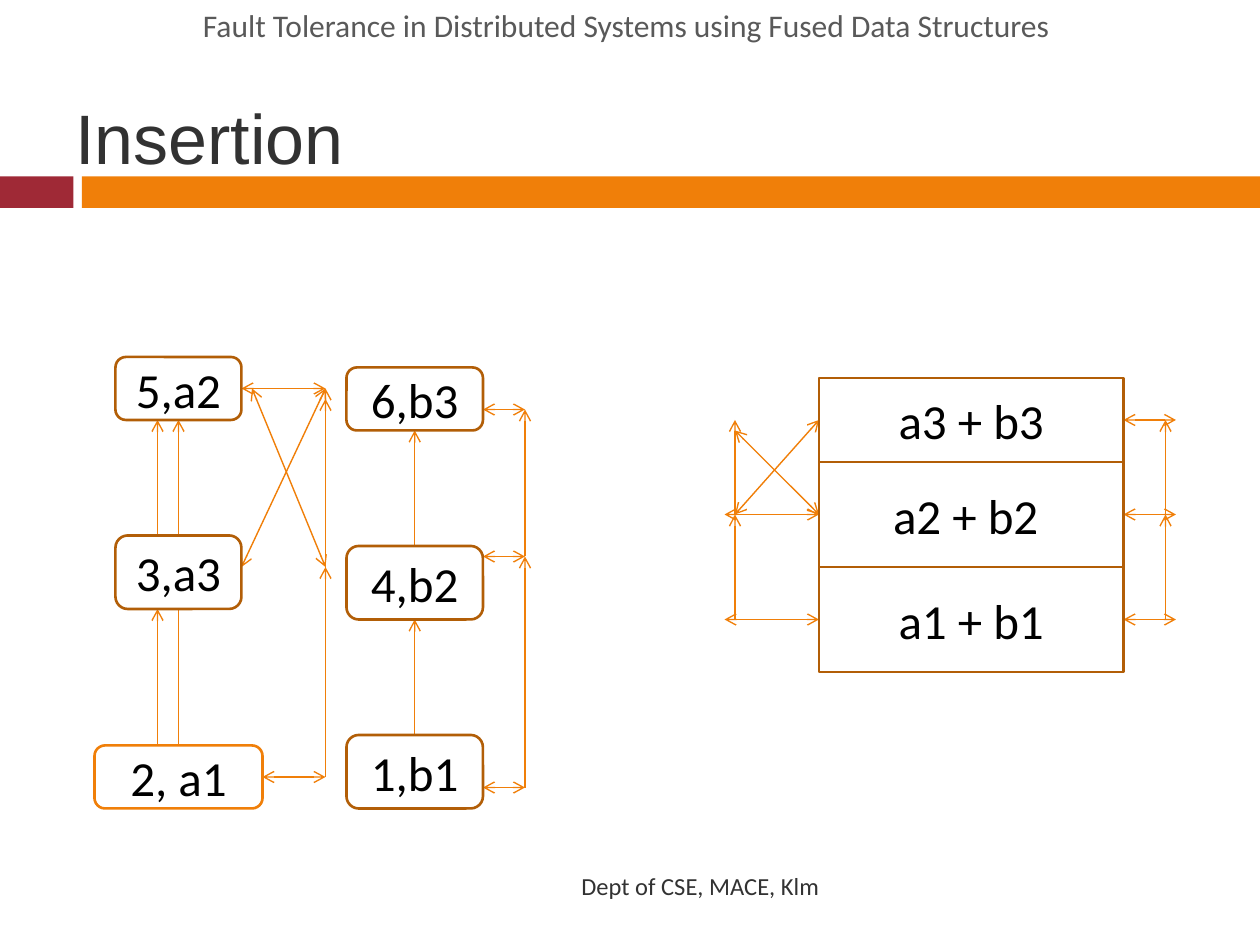
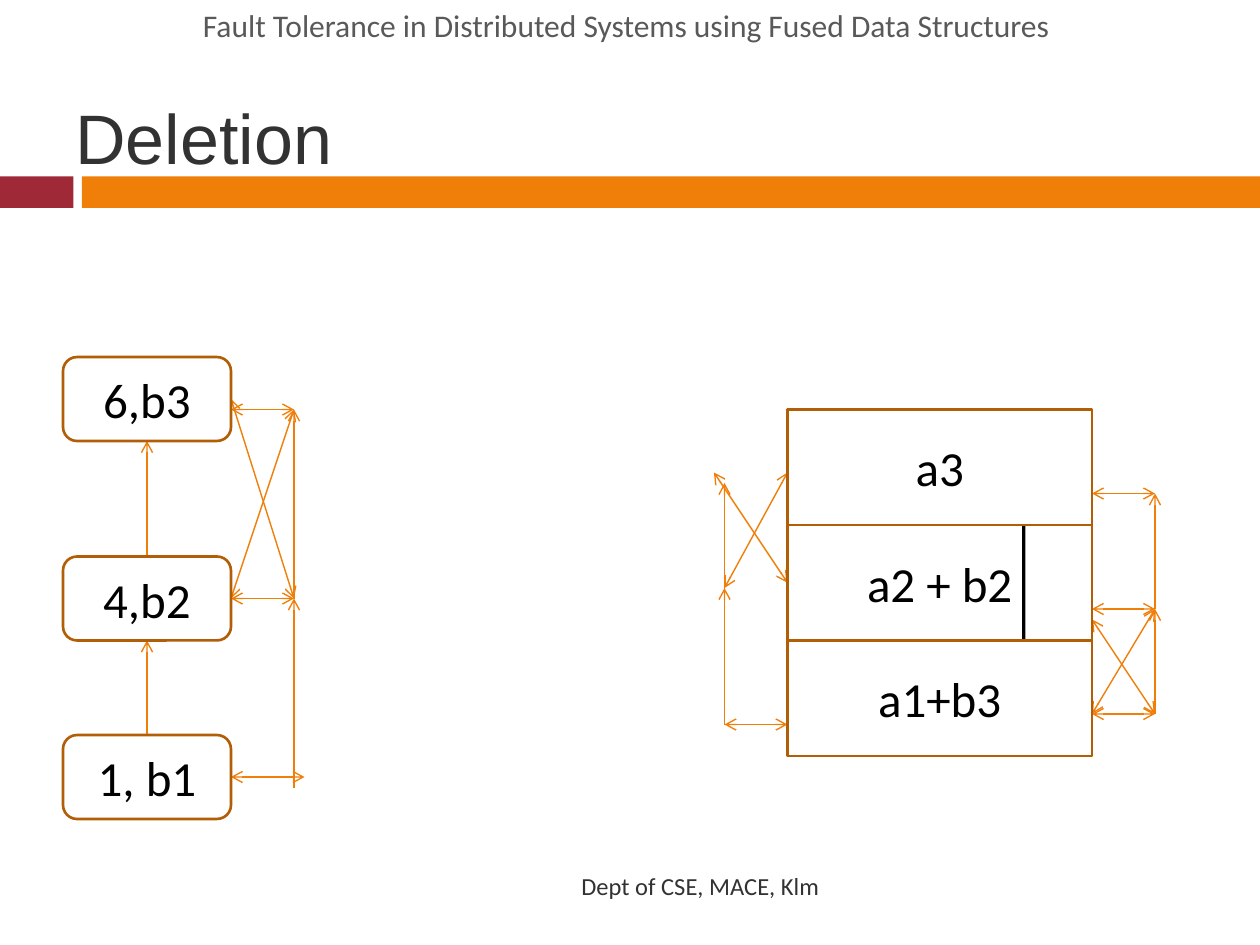
import dataclasses

import lxml.etree
import pptx
import pptx.dml.color
import pptx.enum.shapes
import pptx.enum.text
import pptx.oxml.ns
import pptx.util


@dataclasses.dataclass(frozen=True)
class Theme:
    red: str = "9F2936"
    orange: str = "F07F09"
    brown: str = "B25E07"
    white: str = "FFFFFF"
    black: str = "000000"
    title_ink: str = "323232"
    header_ink: str = "595959"
    title_size: int = 40
    node_size: int = 28
    header_size: int = 18
    footer_size: int = 14
    title_font: str = "Arial"
    body_font: str = "Calibri"
    outline: float = 1.5
    link_width: float = 0.79


THEME = Theme()
COLUMNS, ROWS = 120, 90
RECTANGLE = pptx.enum.shapes.MSO_SHAPE.RECTANGLE
ROUNDED = pptx.enum.shapes.MSO_SHAPE.ROUNDED_RECTANGLE
BENT_ARROW = pptx.enum.shapes.MSO_SHAPE.BENT_UP_ARROW
LEFT, CENTER, RIGHT = (pptx.enum.text.PP_ALIGN.LEFT, pptx.enum.text.PP_ALIGN.CENTER,
                       pptx.enum.text.PP_ALIGN.RIGHT)
MIDDLE, TOP = pptx.enum.text.MSO_ANCHOR.MIDDLE, pptx.enum.text.MSO_ANCHOR.TOP
rgb = pptx.dml.color.RGBColor.from_string

presentation = pptx.Presentation()
presentation.slide_width = pptx.util.Inches(10)
presentation.slide_height = pptx.util.Inches(7.5)


def grid(*cells):
    """Turn counts of square grid cells into slide lengths."""
    return [round(cell * presentation.slide_width / COLUMNS) for cell in cells]


def write_text(shape, text, size=THEME.node_size, color=THEME.black,
               font=THEME.body_font, align=CENTER, anchor=MIDDLE):
    frame = shape.text_frame
    frame.word_wrap = True
    frame.vertical_anchor = anchor
    paragraph = frame.paragraphs[0]
    paragraph.alignment = align
    run = paragraph.add_run()
    run.text = text
    run.font.name = font
    run.font.size = pptx.util.Pt(size)
    run.font.color.rgb = rgb(color)


# Shapes: kind, (column, row, width, height), fill, line, text
BANDS = [
    (RECTANGLE, (0, 16.8, 7, 3), THEME.red, None, ""),
    (RECTANGLE, (7.8, 16.8, COLUMNS - 7.8, 3), THEME.orange, None, ""),
]

insertion_nodes = [
    (ROUNDED, (9, 71, 16, 6), THEME.white, THEME.orange, "2, a1"),
    *((ROUNDED, box, THEME.white, THEME.brown, text) for text, box in [
        ("5,a2", (11, 34, 12, 6)), ("3,a3", (11, 51, 12, 7)),
        ("1,b1", (33, 70, 13, 7)), ("4,b2", (33, 52, 13, 7)),
        ("6,b3", (33, 35, 13, 6))]),
    *((RECTANGLE, (78, row, 29, height), THEME.white, THEME.brown, text)
      for text, row, height in [
          ("a2 + b2 ", 44, 10), ("a1 + b1", 54, 10), ("a3 + b3", 36, 8)]),
]

deletion_nodes = [
    *((ROUNDED, (6, row, 16, 8), THEME.white, THEME.brown, text)
      for text, row in [("1, b1", 70), ("4,b2", 53), ("6,b3", 34)]),
    (RECTANGLE, (75, 50, 29, 11), THEME.white, THEME.brown, "a2 + b2"),
    (BENT_ARROW, (96, 44, 6, 23), THEME.black, None, ""),
    *((RECTANGLE, (75, row, 29, 11), THEME.white, THEME.brown, text)
      for text, row in [("a1+b3", 61), ("a3", 39)]),
]

# Links: (from column, from row, to column, to row)
insertion_one_way = [
    (17, 71, 17, 40), (15, 71, 15, 58), (15, 51, 15, 40),
    (31, 74, 31, 38), (31, 74, 31, 54), (31, 54, 31, 37),
    (39.5, 70, 39.5, 59), (39.5, 52, 39.5, 41),
    (50, 75, 50, 53), (50, 53, 50, 39),
    (111, 59, 111, 49), (111, 50, 111, 40),
    (70, 59, 70, 49), (70, 49, 70, 40),
]
insertion_two_way = [
    (25, 74, 31, 74), (23, 37, 31, 37), (31, 54, 24, 37), (31, 37, 23, 54),
    *((46, row, 50, row) for row in (75, 53, 39)),
    *((107, row, 112, row) for row in (59, 49, 40)),
    *((78, row, 69, row) for row in (59, 49)),
    (70, 49, 78, 40), (70, 41, 78, 49),
]

deletion_one_way = [
    (14, 70, 14, 61), (14, 53, 14, 42), (28, 75, 28, 57), (28, 57, 28, 39),
    (110, 68, 110, 58), (110, 58, 110, 47),
    (69, 69, 69, 56), (69, 57, 69, 46),
]
deletion_two_way = [
    (22, 74, 29, 74), (22, 57, 28, 57), (28, 39, 22, 39),
    (22, 38, 28, 57), (22, 57, 28, 39),
    *((104, row, 110, row) for row in (68, 58, 47)),
    (104, 59, 110, 68), (104, 68, 110, 58),
    (75, 69, 69, 69), (69, 56, 75, 45), (75, 55.5, 68, 45),
]

SLIDES = [
    ("Insertion", insertion_nodes, insertion_one_way, insertion_two_way),
    ("Deletion", deletion_nodes, deletion_one_way, deletion_two_way),
]

for title, nodes, one_way, two_way in SLIDES:
    slide = presentation.slides.add_slide(presentation.slide_layouts[6])

    links = ([(link, ["tailEnd"]) for link in one_way]
             + [(link, ["headEnd", "tailEnd"]) for link in two_way])
    for link, arrow_ends in links:
        connector = slide.shapes.add_connector(
            pptx.enum.shapes.MSO_CONNECTOR.STRAIGHT, *grid(*link))
        connector.line.color.rgb = rgb(THEME.orange)
        connector.line.width = pptx.util.Pt(THEME.link_width)
        properties = connector._element.spPr
        outline = properties.find(pptx.oxml.ns.qn("a:ln"))
        for end in arrow_ends:
            lxml.etree.SubElement(outline, pptx.oxml.ns.qn(f"a:{end}"), type="arrow")
        lxml.etree.SubElement(properties, pptx.oxml.ns.qn("a:effectLst"))

    for kind, box, fill, line, text in BANDS + nodes:
        shape = slide.shapes.add_shape(kind, *grid(*box))
        shape.shadow.inherit = False
        shape.fill.solid()
        shape.fill.fore_color.rgb = rgb(fill)
        if line:
            shape.line.color.rgb = rgb(line)
            shape.line.width = pptx.util.Pt(THEME.outline)
        else:
            shape.line.fill.background()
        if kind == BENT_ARROW:
            shape.rotation = 180
            for index, share in enumerate((0.05, 0.25, 0.2)):
                shape.adjustments[index] = share
        if text:
            write_text(shape, text)

    title_box = slide.shapes.add_textbox(*grid(6, 6, COLUMNS - 12, 14))
    write_text(title_box, title, size=THEME.title_size, color=THEME.title_ink,
               font=THEME.title_font, align=LEFT)
    header_box = slide.shapes.add_textbox(*grid(0, 0, COLUMNS, 4.8))
    write_text(header_box,
               "Fault Tolerance in Distributed Systems using Fused Data Structures ",
               size=THEME.header_size, color=THEME.header_ink, anchor=TOP)
    footer_box = slide.shapes.add_textbox(*grid(8, ROWS - 8, 71.2, 4.8))
    write_text(footer_box, "Dept of CSE, MACE, Klm", size=THEME.footer_size,
               color=THEME.title_ink, align=RIGHT)

presentation.save("out.pptx")
